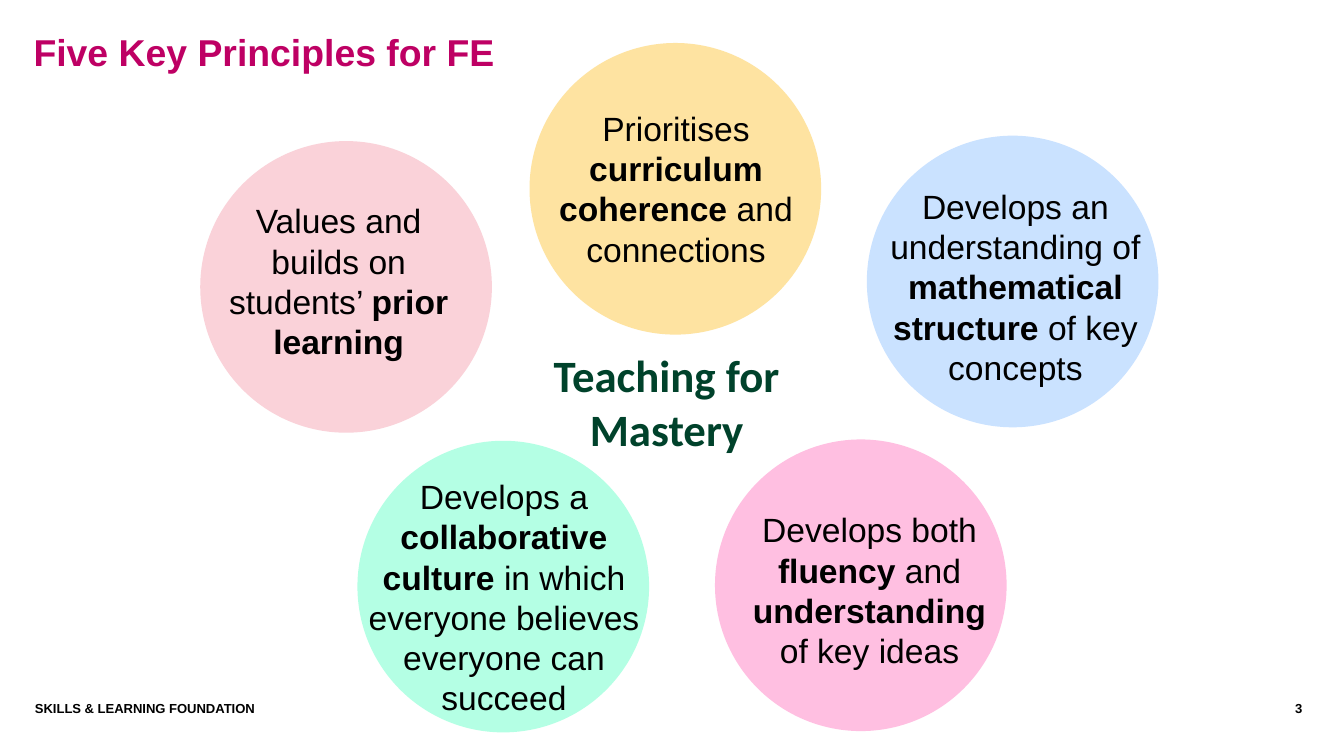
from pptx import Presentation
from pptx.dml.color import RGBColor
from pptx.enum.shapes import MSO_SHAPE
from pptx.enum.text import MSO_ANCHOR, PP_ALIGN
from pptx.util import Inches, Pt

COLORS = {
    "black": "000000", "magenta": "BE0064", "dark_green": "00422B",
    "mint": "B4FFE4", "yellow": "FEE3A1", "pink": "FFBFE1",
    "blue": "CAE2FF", "rose": "FAD2D9",
}
SLIDE_WIDTH = 10
SLIDE_HEIGHT = SLIDE_WIDTH * 9 / 16
DIAMETER = 2.17

# Circle colour, circle corner, label box relative to the circle, label text
PRINCIPLES = [
    ("mint", (2.66, 3.28), (0, 0.22, 2.18, 1.38),
     "Develops a **collaborative culture **in which everyone believes everyone can succeed"),
    ("yellow", (3.94, 0.32), (0.04, 0.44, 2.1, 0.97),
     "Prioritises **curriculum coherence **and connections"),
    ("pink", (5.32, 3.27), (0.2, 0.48, 1.9, 1.35),
     "Develops both **fluency** and **understanding** of key ideas"),
    ("blue", (6.45, 1.01), (-0.05, 0.33, 2.31, 1.41),
     "Develops an understanding of **mathematical structure **of key concepts"),
    ("rose", (1.49, 1.05), (0.08, 0.4, 1.9, 1.05),
     "Values and builds on students’ **prior learning**"),
]


def add_text(slide, box, text, size=18, color="black", font="Arial",
             align=PP_ALIGN.CENTER, margins=(0.07, 0.04), line_spacing=None):
    """Place text in a box; parts between ** marks are bold."""
    frame = slide.shapes.add_textbox(*map(Inches, box)).text_frame
    frame.word_wrap = True
    frame.vertical_anchor = MSO_ANCHOR.TOP
    frame.margin_left = frame.margin_right = Inches(margins[0])
    frame.margin_top = frame.margin_bottom = Inches(margins[1])
    paragraph = frame.paragraphs[0]
    paragraph.alignment = align
    if line_spacing:
        paragraph.line_spacing = Pt(line_spacing)
    for index, part in enumerate(text.split("**")):
        if part:
            run = paragraph.add_run()
            run.text = part
            run.font.name = font
            run.font.size = Pt(size)
            run.font.bold = index % 2 == 1
            run.font.color.rgb = RGBColor.from_string(COLORS[color])


def add_title(slide, box):
    add_text(slide, box, "**Five Key Principles for FE**", size=20, color="magenta",
             align=PP_ALIGN.LEFT, margins=(0, 0), line_spacing=20)


def add_footer(slide, box):
    left, top, width, height = box
    number_width = 0.99
    add_text(slide, (left, top, width - number_width - 0.03, height),
             "**SKILLS & LEARNING FOUNDATION**", size=7, align=PP_ALIGN.LEFT, margins=(0, 0))
    add_text(slide, (left + width - number_width, top, number_width, height),
             "**3**", size=7, align=PP_ALIGN.RIGHT, margins=(0, 0))


def add_principle(slide, box, color, label_box, text):
    left, top, width, height = box
    circle = slide.shapes.add_shape(MSO_SHAPE.OVAL, *map(Inches, box))
    circle.shadow.inherit = False
    circle.fill.solid()
    circle.fill.fore_color.rgb = RGBColor.from_string(COLORS[color])
    circle.line.fill.background()
    dx, dy, label_width, label_height = label_box
    add_text(slide, (left + dx, top + dy, label_width, label_height), text)


def main():
    presentation = Presentation()
    presentation.slide_width = Inches(SLIDE_WIDTH)
    presentation.slide_height = Inches(SLIDE_HEIGHT)
    slide = presentation.slides.add_slide(presentation.slide_layouts[6])

    add_footer(slide, (0.26, 5.21, 9.43, 0.3))
    add_title(slide, (0.25, 0.27, 9.23, 0.76))

    # Ring of principles around the central theme
    for color, corner, label_box, text in PRINCIPLES:
        add_principle(slide, (*corner, DIAMETER, DIAMETER), color, label_box, text)
    add_text(slide, (4.01, 2.55, 1.9, 0.8), "**Teaching for Mastery**",
             size=24, color="dark_green", font="Calibri")

    presentation.save("out.pptx")


if __name__ == "__main__":
    main()
